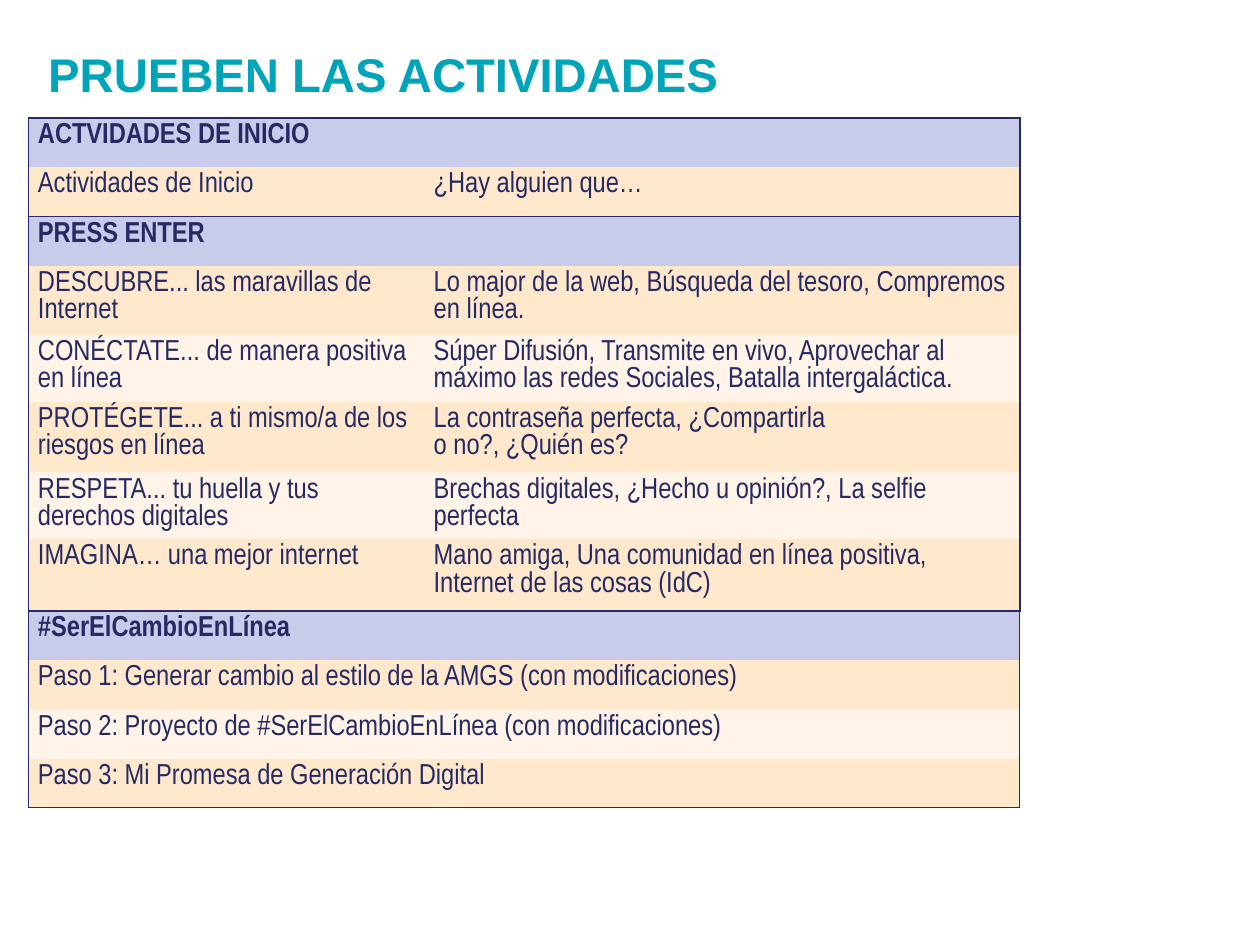
from lxml.etree import SubElement
from pptx import Presentation
from pptx.dml.color import RGBColor
from pptx.enum.text import MSO_ANCHOR as Anchor
from pptx.oxml.ns import qn
from pptx.util import Pt

TITLE = "PRUEBEN LAS ACTIVIDADES"
SECTIONS = [
    ("ACTVIDADES DE INICIO", 1.5, [
        (50, "Actividades de Inicio", "¿Hay alguien que…"),
    ]),
    ("PRESS ENTER", 1.5, [
        (70, "DESCUBRE... las maravillas de Internet",
         "Lo major de la web, Búsqueda del tesoro, Compremos en línea."),
        (68, "CONÉCTATE... de manera positiva en línea",
         "Súper Difusión, Transmite en vivo, Aprovechar al máximo las redes Sociales, "
         "Batalla intergaláctica."),
        (72, "PROTÉGETE... a ti mismo/a de los riesgos en línea",
         "La contraseña perfecta, ¿Compartirla\no no?, ¿Quién es?"),
        (68, "RESPETA... tu huella y tus derechos digitales",
         "Brechas digitales, ¿Hecho u opinión?, La selfie perfecta"),
        (73, "IMAGINA… una mejor internet",
         "Mano amiga, Una comunidad en línea positiva, Internet de las cosas (IdC)"),
    ]),
    ("#SerElCambioEnLínea", 1, [
        (50, "Paso 1: Generar cambio al estilo de la AMGS (con modificaciones)"),
        (50, "Paso 2: Proyecto de #SerElCambioEnLínea (con modificaciones)"),
        (50, "Paso 3: Mi Promesa de Generación Digital"),
    ]),
]

PX = 9525
HEADER_HEIGHT = 50
COLUMNS = [402, 605]
TEAL = RGBColor(0x00, 0xA4, 0xBA)
NAVY = RGBColor(0x26, 0x29, 0x63)
LAVENDER = RGBColor(0xC9, 0xCB, 0xEA)
BANDS = [RGBColor(0xFF, 0xE8, 0xCC), RGBColor(0xFF, 0xF4, 0xE7)]
TITLE_FONT = {"name": "Arial", "size": Pt(36), "bold": True}
CELL_FONT = {"name": "Arial Narrow", "size": Pt(22)}
CELL_LINE = Pt(20.6)


def style(para, color, spacing, formats):
    para.line_spacing = spacing
    for name, value in formats.items():
        setattr(para.font, name, value)
    para.font.color.rgb = color


def set_borders(cell, widths):
    properties = cell._tc.get_or_add_tcPr()
    for side in "LRTB":
        width = widths.get(side, 0)
        line = SubElement(properties, qn(f"a:ln{side}"), w=str(Pt(width)))
        if width:
            fill = SubElement(line, qn("a:solidFill"))
            SubElement(fill, qn("a:srgbClr"), val=str(NAVY))
        else:
            SubElement(line, qn("a:noFill"))


def add_title(page):
    box = page.shapes.add_textbox(*(n * PX for n in (49, 53, 1091, 50)))
    frame = box.text_frame
    frame.word_wrap = True
    frame.vertical_anchor = Anchor.MIDDLE
    for side in ("left", "top", "right", "bottom"):
        setattr(frame, f"margin_{side}", 0)
    frame.text = TITLE
    style(frame.paragraphs[0], TEAL, 0.9, TITLE_FONT)


def plan_rows():
    rows = []
    for heading, width, lines in SECTIONS:
        rows.append((HEADER_HEIGHT, [heading], LAVENDER, True, {"L": width, "R": width, "T": 1.5}))
        for index, (height, *texts) in enumerate(lines):
            edges = {"L": width, "R": width}
            if index == len(lines) - 1:
                edges["B"] = width
            rows.append((height, texts, BANDS[index % 2], False, edges))
    return rows


def add_activities(page):
    rows = plan_rows()
    height = sum(row[0] for row in rows)
    area = (29, 120, sum(COLUMNS), height)
    table = page.shapes.add_table(len(rows), len(COLUMNS), *(n * PX for n in area)).table
    for column, width in zip(table.columns, COLUMNS):
        column.width = width * PX
    for index, (height, texts, color, bold, edges) in enumerate(rows):
        table.rows[index].height = height * PX
        first, last = table.cell(index, 0), table.cell(index, 1)
        merged = len(texts) == 1
        if merged:
            first.merge(last)
        for cell, inner in ((first, "" if merged else "R"), (last, "L")):
            set_borders(cell, {side: width for side, width in edges.items() if side != inner})
            cell.fill.solid()
            cell.fill.fore_color.rgb = color
        for cell, text in zip((first, last), texts):
            cell.text_frame.text = text
            for para in cell.text_frame.paragraphs:
                style(para, NAVY, CELL_LINE, CELL_FONT | {"bold": bold})


def main():
    deck = Presentation()
    deck.slide_width, deck.slide_height = 1280 * PX, 960 * PX
    page = deck.slides.add_slide(deck.slide_layouts[6])
    add_title(page)
    add_activities(page)
    deck.save("out.pptx")


if __name__ == "__main__":
    main()
